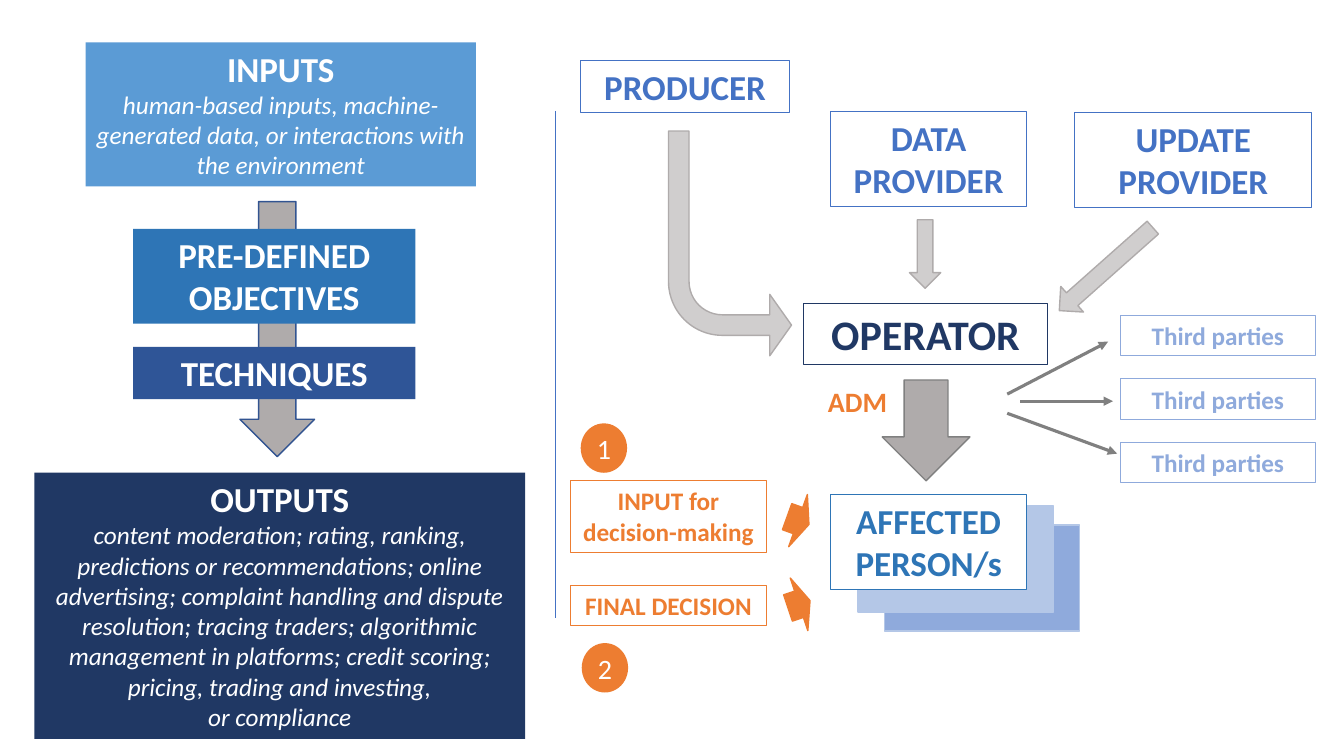
from lxml import etree
from pptx import Presentation
from pptx.dml.color import RGBColor
from pptx.enum.shapes import MSO_CONNECTOR, MSO_SHAPE
from pptx.enum.text import MSO_ANCHOR, PP_ALIGN
from pptx.oxml.ns import qn
from pptx.util import Pt

PX = 9144
FONT = "Calibri"
RECTANGLE = MSO_SHAPE.RECTANGLE
OVAL = MSO_SHAPE.OVAL
DOWN_ARROW = MSO_SHAPE.DOWN_ARROW
RIGHT_ARROW = MSO_SHAPE.RIGHT_ARROW
BENT_ARROW = MSO_SHAPE.BENT_ARROW
STRAIGHT = MSO_CONNECTOR.STRAIGHT
CENTER = PP_ALIGN.CENTER
TOP = MSO_ANCHOR.TOP
MIDDLE = MSO_ANCHOR.MIDDLE

WHITE = "FFFFFF"
NAVY = "203864"
BLUE = "4472C4"
DEEP_BLUE = "2E75B6"
SOFT_BLUE = "8FAADC"
PALE_BLUE = "B4C7E7"
ORANGE = "ED7D31"
GRAY = "AFABAB"
DARK_GRAY = "808080"
LIGHT_GRAY = "D0CECE"

INPUTS = "human-based inputs, machine-generated data, or interactions with the environment"
OUTPUTS = (
    "content moderation; rating, ranking, predictions or recommendations; online "
    "advertising; complaint handling and dispute resolution; tracing traders; "
    "algorithmic management in platforms; credit scoring; pricing, trading and investing,"
)


def color(value):
    """Turn a hex string into a colour."""
    return RGBColor.from_string(value)


def add_text(frame, text, first=False, size=25, hue=WHITE, bold=True, italic=False):
    """Write one centred paragraph into a text frame."""
    paragraph = frame.paragraphs[0] if first else frame.add_paragraph()
    paragraph.alignment = CENTER
    run = paragraph.add_run()
    run.text = text
    run.font.name = FONT
    run.font.size = Pt(size)
    run.font.bold = bold
    run.font.italic = italic
    run.font.color.rgb = color(hue)


def add_shape(slide, kind, box, fill=None, line=None, weight=1, rotation=0):
    """Add a flat preset shape with optional fill and outline."""
    shape = slide.shapes.add_shape(kind, *(length * PX for length in box))
    shape.shadow.inherit = False
    shape.rotation = rotation
    if fill:
        shape.fill.solid()
        shape.fill.fore_color.rgb = color(fill)
    else:
        shape.fill.background()
    if line:
        shape.line.color.rgb = color(line)
        shape.line.width = Pt(weight)
    else:
        shape.line.fill.background()
    return shape


def add_panel(slide, box, fill, title, details=()):
    """Add a filled box with a bold title and italic details."""
    frame = add_shape(slide, RECTANGLE, box, fill).text_frame
    frame.word_wrap = True
    frame.vertical_anchor = TOP
    add_text(frame, title, first=True)
    for detail in details:
        add_text(frame, detail, size=18, bold=False, italic=True)


def add_role(slide, box, text, hue, size=25, fill=None):
    """Add an outlined box whose text matches its border."""
    frame = add_shape(slide, RECTANGLE, box, fill, hue, 0.75).text_frame
    frame.word_wrap = True
    frame.vertical_anchor = TOP
    add_text(frame, text, first=True, size=size, hue=hue)


def add_badge(slide, left, top, number):
    """Add a numbered orange circle."""
    frame = add_shape(slide, OVAL, (left, top, 46, 49), ORANGE).text_frame
    frame.margin_left = frame.margin_right = frame.margin_top = frame.margin_bottom = 0
    frame.vertical_anchor = MIDDLE
    add_text(frame, number, first=True, size=20, bold=False)


def add_line(slide, start, end, hue, weight, arrow=False):
    """Add a straight line, with an arrowhead at its end if asked."""
    points = (length * PX for length in (*start, *end))
    connector = slide.shapes.add_connector(STRAIGHT, *points)
    connector.line.color.rgb = color(hue)
    connector.line.width = Pt(weight)
    if arrow:
        outline = connector.line._get_or_add_ln()
        etree.SubElement(outline, qn("a:tailEnd"), type="triangle")
    etree.SubElement(connector._element.spPr, qn("a:effectLst"))


def add_bent_arrow(slide, box):
    """Add the arrow that runs down and then turns right."""
    shape = add_shape(slide, BENT_ARROW, box, LIGHT_GRAY, GRAY, rotation=180)
    shape._element.spPr.xfrm.set("flipH", "1")
    for index, value in enumerate((0.167, 0.25, 0.177, 0.438)):
        shape.adjustments[index] = value


def add_process(slide):
    """Build the flow from inputs to outputs."""
    add_panel(slide, (85, 42, 387, 143), "5B9BD5", "INPUTS", [INPUTS])
    add_panel(slide, (34, 469, 487, 264), NAVY, "OUTPUTS", [OUTPUTS, "or compliance"])
    add_shape(slide, DOWN_ARROW, (238, 200, 74, 253), GRAY, "325491")
    add_panel(slide, (132, 227, 280, 94), DEEP_BLUE, "PRE-DEFINED OBJECTIVES")
    add_panel(slide, (132, 344, 280, 52), "2F5597", "TECHNIQUES")


def add_actors(slide):
    """Build the providers, the operator and the affected persons."""
    add_role(slide, (797, 301, 242, 61), "OPERATOR", NAVY, size=30)
    add_shape(slide, RECTANGLE, (877, 521, 194, 105), SOFT_BLUE, PALE_BLUE)
    add_shape(slide, RECTANGLE, (851, 502, 194, 105), PALE_BLUE, PALE_BLUE)
    add_role(slide, (824, 491, 194, 94), "AFFECTED PERSON/s", DEEP_BLUE, fill=WHITE)
    add_shape(slide, DOWN_ARROW, (875, 377, 87, 100), GRAY, DARK_GRAY)
    label = slide.shapes.add_textbox(796 * PX, 377 * PX, 109 * PX, 44 * PX)
    label.text_frame.word_wrap = True
    add_text(label.text_frame, "ADM", first=True, size=20, hue=ORANGE)
    add_role(slide, (576, 60, 207, 52), "PRODUCER", BLUE)
    add_role(slide, (824, 111, 194, 94), "DATA PROVIDER", BLUE)
    add_role(slide, (1066, 112, 235, 94), "UPDATE PROVIDER", BLUE)
    add_bent_arrow(slide, (663, 130, 122, 223))
    add_shape(slide, DOWN_ARROW, (902, 218, 31, 68), LIGHT_GRAY, GRAY)
    add_shape(slide, DOWN_ARROW, (1080, 205, 34, 124), LIGHT_GRAY, GRAY, rotation=48.4)


def add_third_parties(slide):
    """Build the third parties and the arrows that lead to them."""
    arrows = [((999, 391), (1099, 339)), ((1012, 398), (1104, 398)), ((999, 410), (1108, 450))]
    for row, (start, end) in enumerate(arrows):
        add_line(slide, start, end, DARK_GRAY, 2.25, arrow=True)
        add_role(slide, (1111, 313 + 63 * row, 194, 40), "Third parties", SOFT_BLUE, size=18)


def add_decisions(slide):
    """Build the two numbered ways in which a decision is reached."""
    add_role(slide, (566, 477, 194, 71), "INPUT for decision-making", ORANGE, size=18)
    add_role(slide, (566, 581, 194, 40), "FINAL DECISION", ORANGE, size=18)
    add_shape(slide, RIGHT_ARROW, (780, 489, 23, 55), ORANGE, ORANGE, rotation=19.7)
    add_shape(slide, RIGHT_ARROW, (781, 572, 23, 55), ORANGE, ORANGE, rotation=341.5)
    add_badge(slide, 576, 420, "1")
    add_badge(slide, 577, 638, "2")


def main():
    """Build and save the slide."""
    presentation = Presentation()
    presentation.slide_width = 1333 * PX
    presentation.slide_height = 750 * PX
    slide = presentation.slides.add_slide(presentation.slide_layouts[6])
    add_process(slide)
    add_line(slide, (551, 110), (551, 613), BLUE, 0.5)
    add_actors(slide)
    add_third_parties(slide)
    add_decisions(slide)
    presentation.save("out.pptx")


if __name__ == "__main__":
    main()
